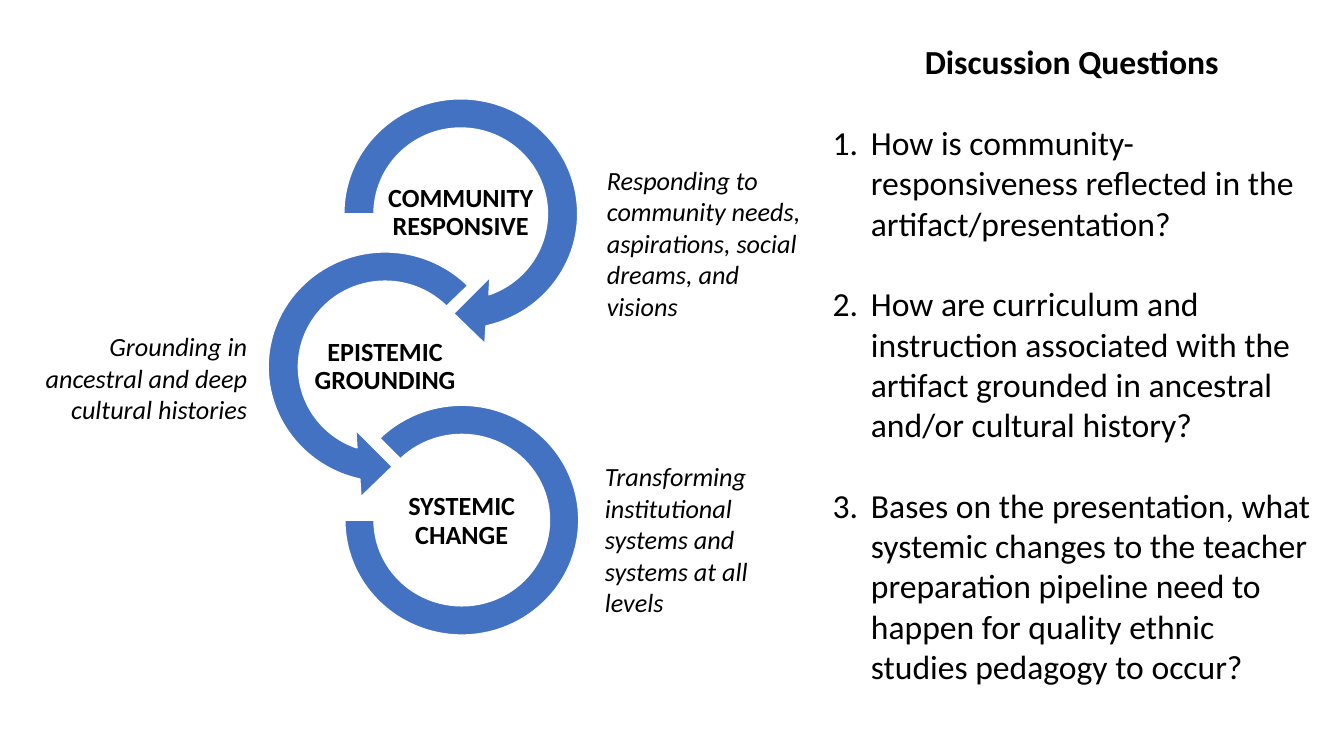
from dataclasses import dataclass
from math import cos, radians, sin, tan

from lxml import etree
from pptx import Presentation
from pptx.dml.color import RGBColor
from pptx.enum.shapes import MSO_SHAPE
from pptx.enum.text import MSO_ANCHOR, MSO_AUTO_SIZE, PP_ALIGN
from pptx.oxml.ns import qn
from pptx.util import Inches, Pt

LEFT, MID, RIGHT = PP_ALIGN.LEFT, PP_ALIGN.CENTER, PP_ALIGN.RIGHT
TOP, CENTER = MSO_ANCHOR.TOP, MSO_ANCHOR.MIDDLE
FIXED, GROW = MSO_AUTO_SIZE.NONE, MSO_AUTO_SIZE.SHAPE_TO_FIT_TEXT
ARC = MSO_SHAPE.BLOCK_ARC

COLORS = {"ring": "4372C3", "edge": "FFFFFF", "text": "000000"}
FONT = "Calibri"
OUTER, INNER = (1.16, 1.14), (0.86, 0.85)  # ring radii
OUT_END, IN_END = 437.5, 431  # angles where the arrow head begins
HEAD = [(0.24, 1.29), (-0.07, 0.99), (0.29, 0.63)]  # from the ring centre
BENDS = 3  # curves in each arc


@dataclass
class Stage:
    label: str
    x: float
    start: float = 0  # start angle of an arrow ring
    side: int = 0  # 1 clockwise, -1 mirrored, 0 ring without a head


@dataclass
class Note:
    text: str
    x: float
    y: float
    tall: float
    align: PP_ALIGN


STAGES = [
    Stage("COMMUNITY RESPONSIVE", 4.57, 180, 1),
    Stage("EPISTEMIC GROUNDING", 3.82, 225, -1),
    Stage("SYSTEMIC CHANGE", 4.58),
]
NOTES = [
    Note("Responding to community needs, aspirations, social dreams, and visions",
         5.92, 1.58, 1.67, LEFT),
    Note("Transforming institutional systems and systems at all levels",
         5.9, 4.52, 1.67, LEFT),
    Note("Grounding in ancestral and deep cultural histories",
         0.34, 3.23, 1.04, RIGHT),
]
TITLE = "Discussion Questions"
ASKS = [
    "How is community-responsiveness reflected in the artifact/presentation?",
    "How are curriculum and instruction associated with the artifact grounded "
    "in ancestral and/or cultural history?",
    "Bases on the presentation, what systemic changes to the teacher "
    "preparation pipeline need to happen for quality ethnic studies pedagogy "
    "to occur?",
]


def tint(name: str) -> RGBColor:
    return RGBColor.from_string(COLORS[name])


def apply(item, form: dict) -> None:
    for key, value in form.items():
        setattr(item, key, value)


def write(shape, lines: list, frame: dict, para: dict, font: dict) -> None:
    """Fill a shape with one paragraph per line."""
    body = shape.text_frame
    apply(body, {"word_wrap": True, **frame})
    body.text = "\n".join(lines)
    for part in body.paragraphs:
        apply(part, para)
        face = part.runs[0].font
        apply(face, {"name": FONT, **font})
        face.color.rgb = tint("text")


def add_box(slide, x: float, y: float, wide: float, tall: float):
    return slide.shapes.add_textbox(*map(Inches, (x, y, wide, tall)))


def sweep(size: tuple, start: float, end: float) -> list:
    """Start point of an elliptic arc, then three points for each curve."""
    turn = radians(end - start) / BENDS
    pull = 4 / 3 * tan(turn / 4)
    dots = [(cos(radians(start)), sin(radians(start)))]
    for i in range(BENDS):
        a = radians(start) + i * turn
        b = a + turn
        dots += [(cos(a) - pull * sin(a), sin(a) + pull * cos(a)),
                 (cos(b) + pull * sin(b), sin(b) - pull * cos(b)),
                 (cos(b), sin(b))]
    return [(size[0] * x, size[1] * y) for x, y in dots]


def bend(lines: list) -> None:
    """Turn each three line segments into one curve."""
    for first, *rest in zip(lines[::3], lines[1::3], lines[2::3]):
        first.tag = qn("a:cubicBezTo")
        for line in rest:
            first.append(line[0])
            line.getparent().remove(line)


def add_arrow(slide, stage: Stage, y: float):
    edge = (sweep(OUTER, stage.start, OUT_END) + HEAD
            + sweep(INNER, IN_END, stage.start))
    dots = [(Inches(stage.x + stage.side * dx), Inches(y + dy))
            for dx, dy in edge]
    pen = slide.shapes.build_freeform(*dots[0])
    pen.add_line_segments(dots[1:], close=True)
    ring = pen.convert_to_shape()
    lines = list(ring._element.iter(qn("a:lnTo")))
    size = 3 * BENDS
    inner = size + len(HEAD) + 1
    bend(lines[:size])
    bend(lines[inner:inner + size])
    return ring


def add_arc(slide, stage: Stage, y: float):
    wide, tall = OUTER
    ring = slide.shapes.add_shape(ARC, *map(Inches, (
        stage.x - wide, y - tall, 2 * wide, 2 * tall)))
    for i, value in enumerate((135, 108, 0.127)):
        ring.adjustments[i] = value
    return ring


def add_stage(slide, stage: Stage, row: int) -> None:
    draw = add_arrow if stage.side else add_arc
    ring = draw(slide, stage, 2.12 + 1.52 * row)
    ring.shadow.inherit = False
    ring.fill.solid()
    ring.fill.fore_color.rgb = tint("ring")
    ring.line.color.rgb = tint("edge")
    ring.line.width = Pt(1)

    sides = ("left", "top", "right", "bottom")
    frame = {f"margin_{side}": Inches(0.01) for side in sides}
    write(add_box(slide, stage.x - 0.75, 1.75 + 1.53 * row, 1.5, 0.73),
          [stage.label], {**frame, "vertical_anchor": CENTER},
          {"alignment": MID, "line_spacing": 0.9},
          {"size": Pt(18.7), "bold": True})


def add_note(slide, note: Note) -> None:
    write(add_box(slide, note.x, note.y, 2.21, note.tall), [note.text],
          {"auto_size": GROW}, {"alignment": note.align},
          {"size": Pt(18.7), "italic": True})


def add_asks(slide) -> None:
    """Title and numbered questions in the right column."""
    head = slide.shapes.title
    apply(head, {"left": Inches(8.16), "top": Inches(0.36),
                 "width": Inches(4.94), "height": Inches(0.5)})
    write(head, [TITLE], {"vertical_anchor": TOP, "auto_size": FIXED},
          {"alignment": MID}, {"size": Pt(24), "bold": True})

    box = add_box(slide, 8.16, 1.16, 4.94, 5.76)
    write(box, ASKS, {"auto_size": GROW}, {"alignment": LEFT}, {"size": Pt(24)})
    for i, part in enumerate(box.text_frame.paragraphs):
        part.space_before = Pt(28.8 if i else 0)
        props = part._p.get_or_add_pPr()
        props.set("marL", str(Inches(0.38)))
        props.set("indent", str(-Inches(0.38)))
        etree.SubElement(props, qn("a:buFont")).set("typeface", "+mj-lt")
        etree.SubElement(props, qn("a:buAutoNum")).set("type", "arabicPeriod")


def main() -> None:
    deck = Presentation()
    deck.slide_width, deck.slide_height = Inches(13.33), Inches(7.5)
    slide = deck.slides.add_slide(deck.slide_layouts[5])

    # Chain of rings with their labels
    for row, stage in enumerate(STAGES):
        add_stage(slide, stage, row)

    # Side notes
    for note in NOTES:
        add_note(slide, note)

    # Questions
    add_asks(slide)
    deck.save("out.pptx")


if __name__ == "__main__":
    main()
